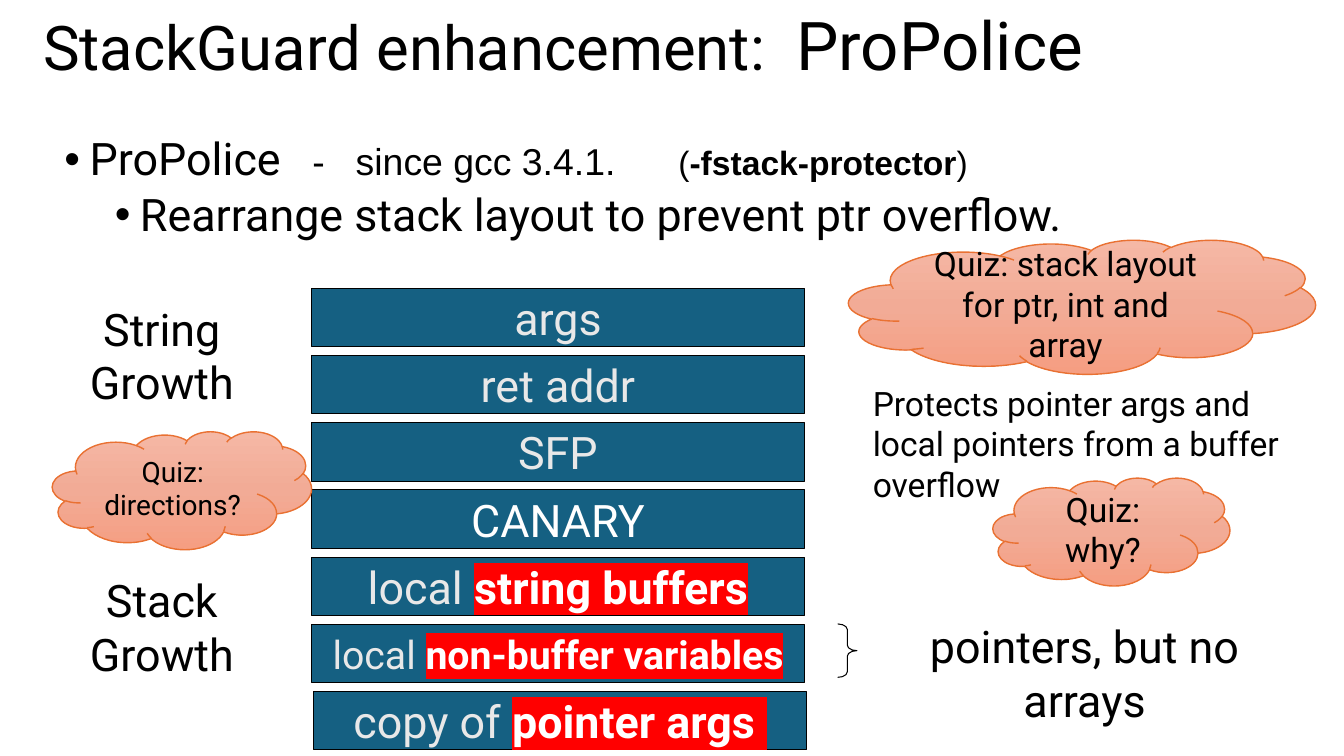
from copy import deepcopy
from lxml import etree
from pptx import Presentation
from pptx.dml.color import RGBColor
from pptx.enum.shapes import MSO_SHAPE
from pptx.enum.text import MSO_ANCHOR, PP_ALIGN
from pptx.oxml.ns import qn
from pptx.util import Inches, Pt

RECT, CLOUD, BRACE = MSO_SHAPE.RECTANGLE, MSO_SHAPE.CLOUD, MSO_SHAPE.RIGHT_BRACE
TOP, MIDDLE = MSO_ANCHOR.TOP, MSO_ANCHOR.MIDDLE
LEFT, CENTER = PP_ALIGN.LEFT, PP_ALIGN.CENTER
COLORS = {
    "black": "000000", "white": "FFFFFF", "pale": "E8E8E8", "blue": "156082",
    "red": "FF0000", "orange": "E97132",
    "cloud_top": "F5B8A5", "cloud_mid": "F2AB96", "cloud_low": "F59E82",
}
RGB = {name: RGBColor.from_string(value) for name, value in COLORS.items()}

prs = Presentation()
prs.slide_width, prs.slide_height = Inches(13.33), Inches(7.5)
s = prs.slides.add_slide(prs.slide_layouts[6])


def place(x, y, w, h, kind=None):
    box = [round(share * side / 100) for share, side in
           zip((x, y, w, h), (prs.slide_width, prs.slide_height) * 2)]
    if kind is None:
        return s.shapes.add_textbox(*box)
    sp = s.shapes.add_shape(kind, *box)
    sp.shadow.inherit = False
    return sp


def write(sp, lines, anchor=TOP, align=LEFT, wrap=True):
    tf = sp.text_frame
    tf.word_wrap, tf.vertical_anchor = wrap, anchor
    for i, runs in enumerate(lines):
        p = tf.add_paragraph() if i else tf.paragraphs[0]
        p.alignment = align
        for text, size, color, font, bold, highlight in runs:
            r = p.add_run()
            r.text = text
            r.font.size, r.font.bold = Pt(size), bold
            r.font.color.rgb = RGB[color]
            r.font.name = font
            if highlight:
                mark = etree.Element(qn("a:highlight"))
                etree.SubElement(mark, qn("a:srgbClr"), val=COLORS[highlight])
                r.font._element.find(qn("a:solidFill")).addnext(mark)
    return tf.paragraphs


PLAIN = ("black", "Roboto", False, None)
ARIAL = ("black", "Arial", False, None)
MARKED = ("white", "Roboto", True, "red")

title = write(place(2.48, -1.87, 93.3, 16.67), [
    [("StackGuard enhancement:\t", 44, *PLAIN), ("ProPolice", 48, *PLAIN)],
], MIDDLE)
body = write(place(4.05, 17.47, 95.03, 19.2), [
    [("ProPolice\t", 32, *PLAIN),
     ("-\tsince gcc 3.4.1.\t", 26.7, *ARIAL),
     ("(", 24, *ARIAL),
     ("-fstack-protector", 24, "black", "Arial", True, None),
     (")", 24, *ARIAL)],
    [("Rearrange stack layout to prevent ptr overflow.", 32, *PLAIN)],
])
for p, level, before, margin, stops in (
    (title[0], 0, 0, 0, [7.47]),
    (body[0], 0, 10, 0.25, [2.46, 2.89, 6.09]),
    (body[1], 1, 5, 0.75, []),
):
    p.level, p.line_spacing, p.space_before = level, 0.9, Pt(before)
    pPr = p._p.get_or_add_pPr()
    if margin:
        pPr.set("marL", str(Inches(margin)))
        pPr.set("indent", str(Inches(-0.25)))
        etree.SubElement(pPr, qn("a:buFont"), typeface="Arial")
        etree.SubElement(pPr, qn("a:buChar"), char="•")
    if stops:
        tabs = etree.SubElement(pPr, qn("a:tabLst"))
        for stop in stops:
            etree.SubElement(tabs, qn("a:tab"), pos=str(Inches(stop)), algn="l")

STACK = [
    ("args", "", 32, "pale", 0),
    ("ret addr", "", 32, "pale", 0),
    ("SFP", "", 32, "pale", 0),
    ("CANARY", "", 32, "white", 0),
    ("local ", "string buffers", 32, "pale", 0),
    ("local ", "non-buffer variables", 28, "pale", 0),
    ("copy of ", "pointer args ", 32, "pale", 0.15),
]
for row, (text, marked, size, color, shift) in enumerate(STACK):
    sp = place(23.18 + shift, 38.13 + row * 8.89, 36.68, 7.73, RECT)
    sp.fill.solid()
    sp.fill.fore_color.rgb = RGB["blue"]
    sp.line.color.rgb, sp.line.width = RGB["black"], Pt(0.75)
    runs = [(text, size, color, "Roboto", False, None)]
    if marked:
        runs.append((marked, size, *MARKED))
    write(sp, [runs], MIDDLE, CENTER, False)

for word, y in (("String", 39.2), ("Stack", 75.07)):
    write(place(5.93, y, 12.23, 15.73),
          [[(word, 32, *PLAIN)], [("Growth", 32, *PLAIN)]], TOP, CENTER, False)

write(place(63.75, 81.2, 33.9, 8.53),
      [[("pointers, but no arrays", 32, *PLAIN)]], TOP, CENTER)
write(place(64.2, 50, 34.73, 12.13), [
    [("Protects pointer args and local pointers from a buffer overflow", 24, *PLAIN)],
])

brace = place(62.33, 82.53, 1.43, 7.07, BRACE)
brace.adjustments[0] = 0.29
brace.fill.background()
brace.line.color.rgb, brace.line.width = RGB["black"], Pt(0.75)

CLOUDS = [
    ("Quiz: directions?", 20, (3.9, 57.07, 19.28, 15.6)),
    ("Quiz: stack layout for ptr, int and array", 24, (63.15, 31.73, 34.73, 17.73)),
    ("Quiz: why?", 24, (73.88, 63.2, 17.63, 14.27)),
]
for text, size, box in CLOUDS:
    sp = place(*box, CLOUD)
    sp.fill.gradient()
    sp.fill.gradient_angle = 270
    first = sp._element.spPr.find(".//" + qn("a:gs"))
    first.addnext(deepcopy(first))
    shades = ("cloud_top", "cloud_mid", "cloud_low")
    for i, (stop, shade) in enumerate(zip(sp.fill.gradient_stops, shades)):
        stop.position, stop.color.rgb = i / 2, RGB[shade]
    sp.line.color.rgb, sp.line.width = RGB["orange"], Pt(1)
    write(sp, [[(text, size, *PLAIN)]], MIDDLE, CENTER)

prs.save("out.pptx")
